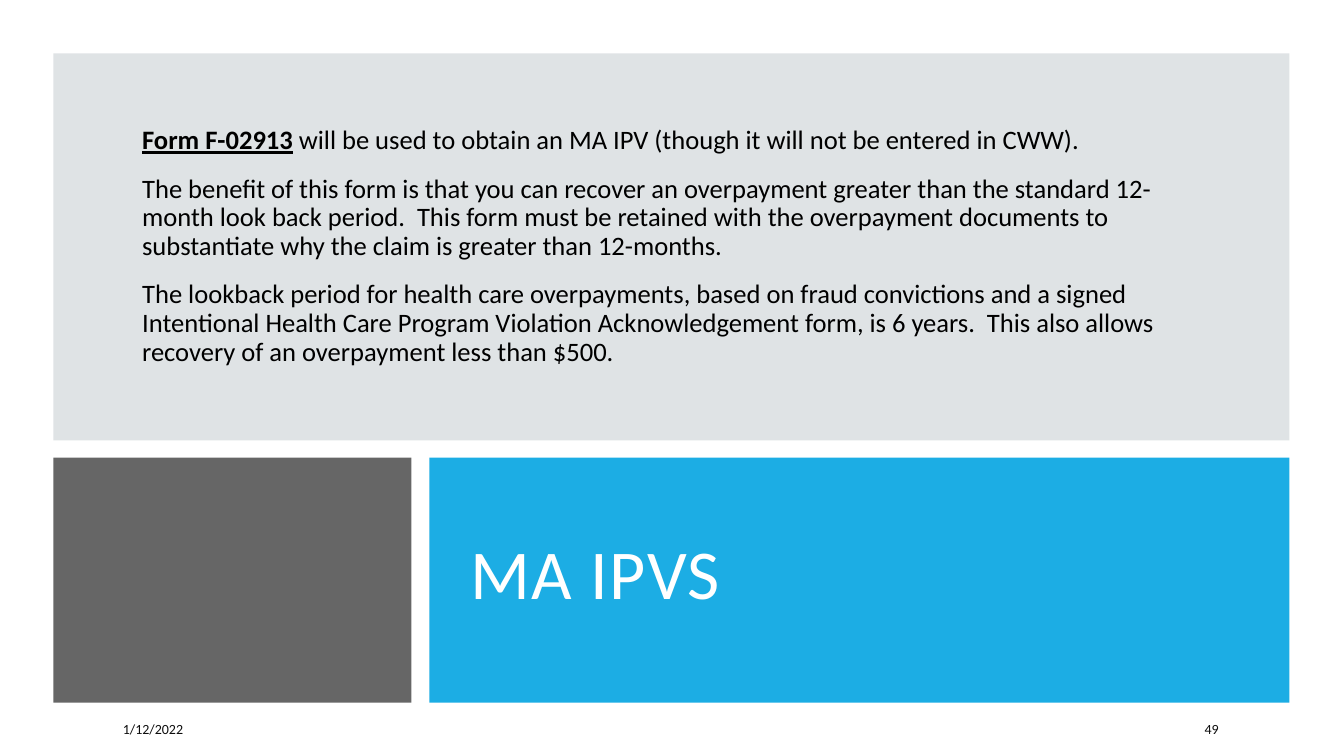
import pptx
import pptx.util
import pptx.dml.color
import pptx.enum.shapes
import pptx.enum.text
import pptx.oxml

Inches, Pt = pptx.util.Inches, pptx.util.Pt
LEFT, RIGHT = 0.53, 12.79
FONT = "Calibri"

NOTES = [
    [("Form F-02913", True),
     (" will be used to obtain an MA IPV (though it will not be entered in CWW).", False)],
    [("The benefit of this form is that you can recover an overpayment greater than "
      "the standard 12-month look back period.  This form must be retained with the "
      "overpayment documents to substantiate why the claim is greater than 12-months.", False)],
    [("The lookback period for health care overpayments, based on fraud convictions and "
      "a signed Intentional Health Care Program Violation Acknowledgement form, is 6 years.  "
      "This also allows recovery of an overpayment less than $500.", False)],
]


def color(code):
    return pptx.dml.color.RGBColor.from_string(code)


def panel(slide, box, fill, alpha=None):
    rect = slide.shapes.add_shape(
        pptx.enum.shapes.MSO_SHAPE.RECTANGLE, *map(Inches, box))
    rect.shadow.inherit = False
    rect.line.fill.background()
    rect.fill.solid()
    rect.fill.fore_color.rgb = color(fill)
    if alpha is not None:
        tint = rect.fill._xPr.find(".//" + pptx.oxml.ns.qn("a:srgbClr"))
        node = pptx.oxml.parse_xml(
            f'<a:alpha {pptx.oxml.ns.nsdecls("a")} val="{alpha * 1000}"/>')
        tint.append(node)


def label(slide, box):
    frame = slide.shapes.add_textbox(*map(Inches, box)).text_frame
    frame.word_wrap = True
    frame.vertical_anchor = pptx.enum.text.MSO_ANCHOR.MIDDLE
    return frame


def write(para, text, size, code, strong=False):
    run = para.add_run()
    run.text = text
    font = run.font
    font.name, font.size = FONT, Pt(size)
    font.color.rgb = color(code)
    font.bold = font.underline = strong
    return run


def body(slide, box):
    x, y, w, h = box
    panel(slide, box, "DFE3E5")
    frame = label(slide, (x + 0.73, y + 0.53, w - 1.41, h - 1.06))
    frame.margin_left = Inches(0.15)
    frame.margin_right = frame.margin_top = frame.margin_bottom = Inches(0.05)
    for i, parts in enumerate(NOTES):
        para = frame.add_paragraph() if i else frame.paragraphs[0]
        para.line_spacing = 0.9
        para.space_before, para.space_after = Pt(12), Pt(2)
        for text, strong in parts:
            write(para, text, 19, "000000", strong)


def title(slide, box):
    x, y, w, h = box
    panel(slide, box, "1CADE4")
    frame = label(slide, (x + 0.31, y + 0.26, w - 0.65, h - 0.53))
    para = frame.paragraphs[0]
    para.line_spacing = 0.8
    run = write(para, "MA IPVS", 50, "FFFFFF")
    run.font._element.set("spc", "100")


def footer(slide, box):
    x, y, w, h = box
    for text, left, wide in (("1/12/2022", x + 0.59, 2.36), ("49", x + w - 0.94, 1.06)):
        para = label(slide, (left, y, wide, h)).paragraphs[0]
        para.space_after = Pt(6)
        write(para, text, 10, "0D0D0D")


def main():
    deck = pptx.Presentation()
    deck.slide_width, deck.slide_height = Inches(13.33), Inches(7.5)
    slide = deck.slides.add_slide(deck.slide_layouts[6])
    # Upper text panel
    body(slide, (LEFT, 0.53, RIGHT - LEFT, 3.84))
    # Lower band: grey block and title
    panel(slide, (LEFT, 4.54, 3.55, 2.43), "000000", 60)
    title(slide, (4.26, 4.54, RIGHT - 4.26, 2.43))
    # Date and slide number
    footer(slide, (LEFT, 7.08, RIGHT - LEFT, 0.3))
    deck.save("out.pptx")


if __name__ == "__main__":
    main()
